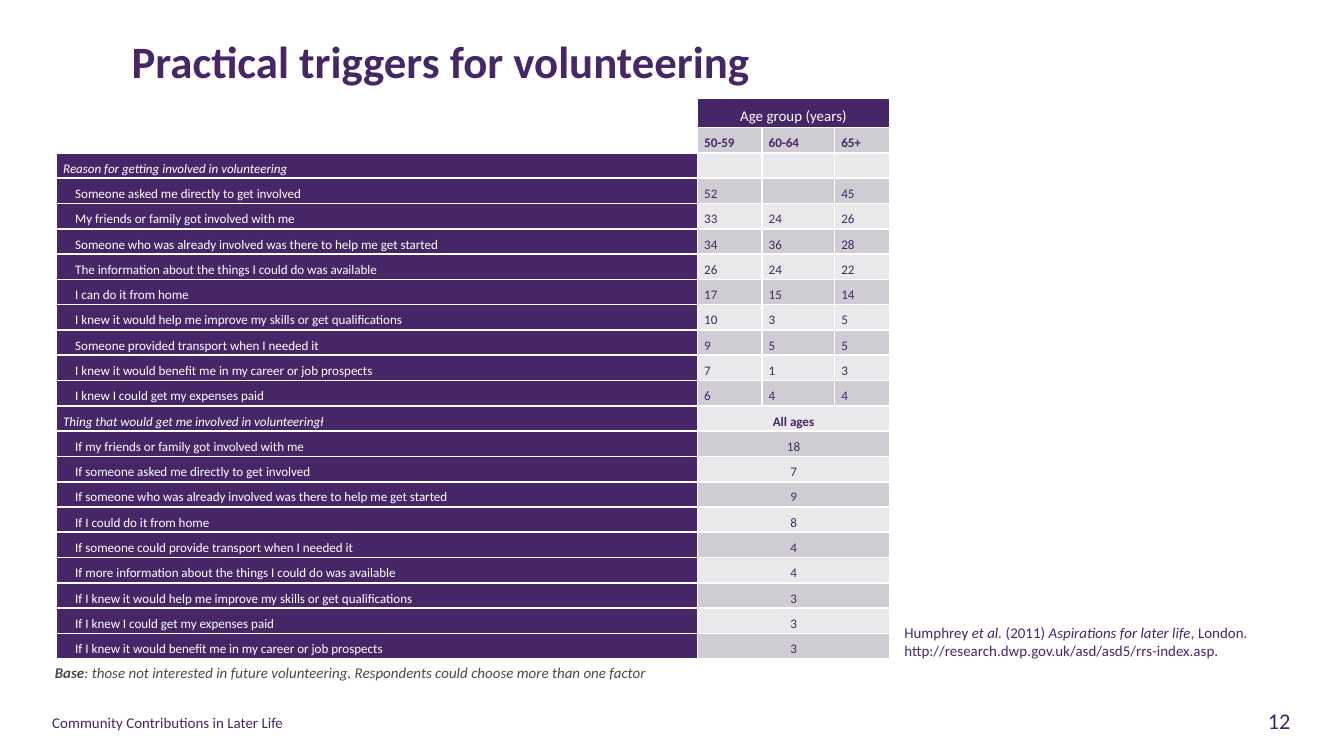
from dataclasses import dataclass
from typing import Any

from lxml.etree import SubElement
from pptx import Presentation
from pptx.dml.color import RGBColor
from pptx.enum.text import MSO_ANCHOR, MSO_AUTO_SIZE, PP_ALIGN
from pptx.oxml.ns import qn
from pptx.util import Inches, Pt

PURPLE, WHITE, GREY = "462666", "FFFFFF", "494949"
BANDS = ("E9E8EA", "CFCDD3")
SLIDE_WIDTH = 10
SLIDE_HEIGHT = SLIDE_WIDTH * 9 / 16
COLUMN_WIDTHS = (4.77, 0.48, 0.54, 0.41)
HEADER_HEIGHT, TABLE_HEIGHT = 0.22, 4.18


@dataclass(frozen=True)
class Row:
    label: str
    values: tuple[str, ...]  # a single value spans all age groups
    heading: bool = False


@dataclass(frozen=True)
class Run:
    text: str
    bold: bool = False
    italic: bool = False


@dataclass(frozen=True)
class Note:
    box: tuple[float, float, float, float]
    lines: tuple[tuple[Run, ...], ...]
    size: float = 8
    color: str = PURPLE
    align: PP_ALIGN = PP_ALIGN.LEFT
    anchor: MSO_ANCHOR = MSO_ANCHOR.TOP


ROWS = (
    Row("", ("Age group (years)",)),
    Row("", ("50-59", "60-64", "65+"), True),
    Row("Reason for getting involved in volunteering", ("", "", ""), True),
    Row("Someone asked me directly to get involved", ("52", "", "45")),
    Row("My friends or family got involved with me", ("33", "24", "26")),
    Row("Someone who was already involved was there to help me get started", ("34", "36", "28")),
    Row("The information about the things I could do was available", ("26", "24", "22")),
    Row("I can do it from home", ("17", "15", "14")),
    Row("I knew it would help me improve my skills or get qualifications", ("10", "3", "5")),
    Row("Someone provided transport when I needed it", ("9", "5", "5")),
    Row("I knew it would benefit me in my career or job prospects", ("7", "1", "3")),
    Row("I knew I could get my expenses paid", ("6", "4", "4")),
    Row("Thing that would get me involved in volunteeringⱡ", ("All ages",), True),
    Row("If my friends or family got involved with me", ("18",)),
    Row("If someone asked me directly to get involved", ("7",)),
    Row("If someone who was already involved was there to help me get started", ("9",)),
    Row("If I could do it from home", ("8",)),
    Row("If someone could provide transport when I needed it", ("4",)),
    Row("If more information about the things I could do was available", ("4",)),
    Row("If I knew it would help me improve my skills or get qualifications", ("3",)),
    Row("If I knew I could get my expenses paid", ("3",)),
    Row("If I knew it would benefit me in my career or job prospects", ("3",)),
)

NOTES = (
    Note((0.31, 4.9, 6.14, 0.21), ((
        Run("Base", bold=True, italic=True),
        Run(": those not interested in future volunteering. "
            "Respondents could choose more than one factor", italic=True)),),
        color=GREY, anchor=MSO_ANCHOR.MIDDLE),
    Note((0.29, 5.26, 3.65, 0.37), ((Run("Community Contributions in Later Life"),),)),
    Note((9.25, 5.21, 0.45, 0.3), ((Run("12"),),), size=12,
         align=PP_ALIGN.RIGHT, anchor=MSO_ANCHOR.MIDDLE),
    Note((6.63, 4.59, 2.78, 0.37), (
        (Run("Humphrey "), Run("et al. ", italic=True), Run("(2011) "),
         Run("Aspirations for later life", italic=True), Run(", London.")),
        (Run("http://research.dwp.gov.uk/asd/asd5/rrs-index.asp."),))),
)


def rgb(color: str) -> RGBColor:
    return RGBColor.from_string(color)


def set_all(target: Any, values: dict[str, Any]) -> None:
    for name, value in values.items():
        setattr(target, name, value)


def add_run(paragraph: Any, run: Run, size: float, color: str) -> None:
    piece = paragraph.add_run()
    piece.text = run.text
    set_all(piece.font, {"name": "Calibri", "size": Pt(size),
                         "bold": run.bold, "italic": run.italic})
    piece.font.color.rgb = rgb(color)


def style_cell(cell: Any, fill: str) -> None:
    """Give the cell white borders, a plain fill and tight margins."""
    properties = cell._tc.get_or_add_tcPr()
    for side in "LRTB":
        line = SubElement(properties, qn(f"a:ln{side}"), w=str(Pt(1)))
        SubElement(SubElement(line, qn("a:solidFill")), qn("a:srgbClr"), val=WHITE)
    cell.fill.solid()
    cell.fill.fore_color.rgb = rgb(fill)
    set_all(cell, {"margin_left": Inches(0.05), "margin_right": Inches(0.05),
                   "margin_top": 0, "margin_bottom": 0})


def write_cell(cell: Any, run: Run, size: float, color: str, align: PP_ALIGN) -> None:
    paragraph = cell.text_frame.paragraphs[0]
    if run.text:
        set_all(paragraph, {"alignment": align, "line_spacing": 1.5})
        add_run(paragraph, run, size, color)
    else:  # keeps an empty cell from stretching its row
        SubElement(paragraph._p, qn("a:endParaRPr"), sz=str(int(size * 100)))


def add_trigger_table(slide: Any) -> None:
    table = slide.shapes.add_table(
        len(ROWS), len(COLUMN_WIDTHS), Inches(0.42), Inches(0.73),
        Inches(sum(COLUMN_WIDTHS)), Inches(TABLE_HEIGHT)).table
    set_all(table, {"first_row": False, "horz_banding": False})
    for column, width in zip(table.columns, COLUMN_WIDTHS):
        column.width = Inches(width)
    body_height = (TABLE_HEIGHT - HEADER_HEIGHT) / (len(ROWS) - 1)

    for index, row in enumerate(ROWS):
        top = index == 0
        table.rows[index].height = Inches(HEADER_HEIGHT if top else body_height)
        cells = [table.cell(index, column) for column in range(len(COLUMN_WIDTHS))]
        value_fill = PURPLE if top else BANDS[index % 2]
        label_fill = PURPLE if row.label else WHITE
        for cell, fill in zip(cells, (label_fill, *[value_fill] * 3)):
            style_cell(cell, fill)
        size = 8 if top else 7

        spans = len(row.values) == 1
        if spans:
            cells[1].merge(cells[3])
        if row.label and not row.heading:
            cells[0].margin_left = Inches(0.14)
        write_cell(cells[0], Run(row.label, italic=row.heading), size, WHITE, PP_ALIGN.LEFT)
        for cell, value in zip(cells[1:], row.values):
            write_cell(cell, Run(value, bold=row.heading), size,
                       WHITE if top else PURPLE,
                       PP_ALIGN.CENTER if spans else PP_ALIGN.LEFT)


def add_note(slide: Any, note: Note) -> None:
    frame = slide.shapes.add_textbox(*map(Inches, note.box)).text_frame
    set_all(frame, {"word_wrap": True, "vertical_anchor": note.anchor})
    for index, runs in enumerate(note.lines):
        paragraph = frame.add_paragraph() if index else frame.paragraphs[0]
        paragraph.alignment = note.align
        for run in runs:
            add_run(paragraph, run, note.size, note.color)


def write_title(slide: Any, text: str) -> None:
    title = slide.shapes.title
    set_all(title, {"left": Inches(0.88), "top": Inches(0.2),
                    "width": Inches(9.11), "height": Inches(0.5)})
    set_all(title.text_frame, {"auto_size": MSO_AUTO_SIZE.NONE, "word_wrap": True,
                               "vertical_anchor": MSO_ANCHOR.TOP})
    paragraph = title.text_frame.paragraphs[0]
    paragraph.alignment = PP_ALIGN.LEFT
    add_run(paragraph, Run(text, bold=True), 24, PURPLE)


def main() -> None:
    deck = Presentation()
    set_all(deck, {"slide_width": Inches(SLIDE_WIDTH),
                   "slide_height": Inches(SLIDE_HEIGHT)})
    slide = deck.slides.add_slide(deck.slide_layouts.get_by_name("Title Only"))
    write_title(slide, "Practical triggers for volunteering")
    add_trigger_table(slide)
    for note in NOTES:
        add_note(slide, note)
    deck.save("out.pptx")


if __name__ == "__main__":
    main()
